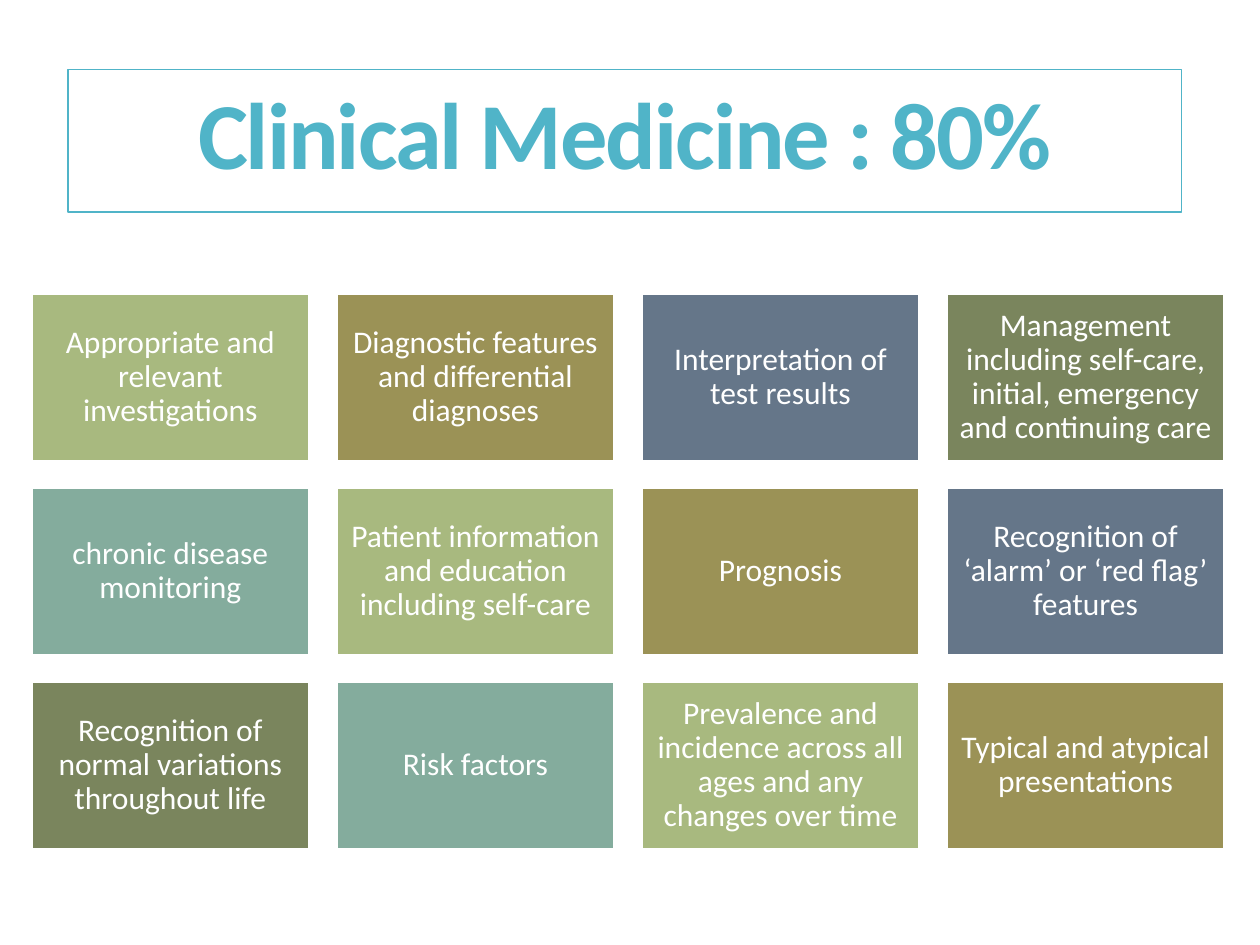
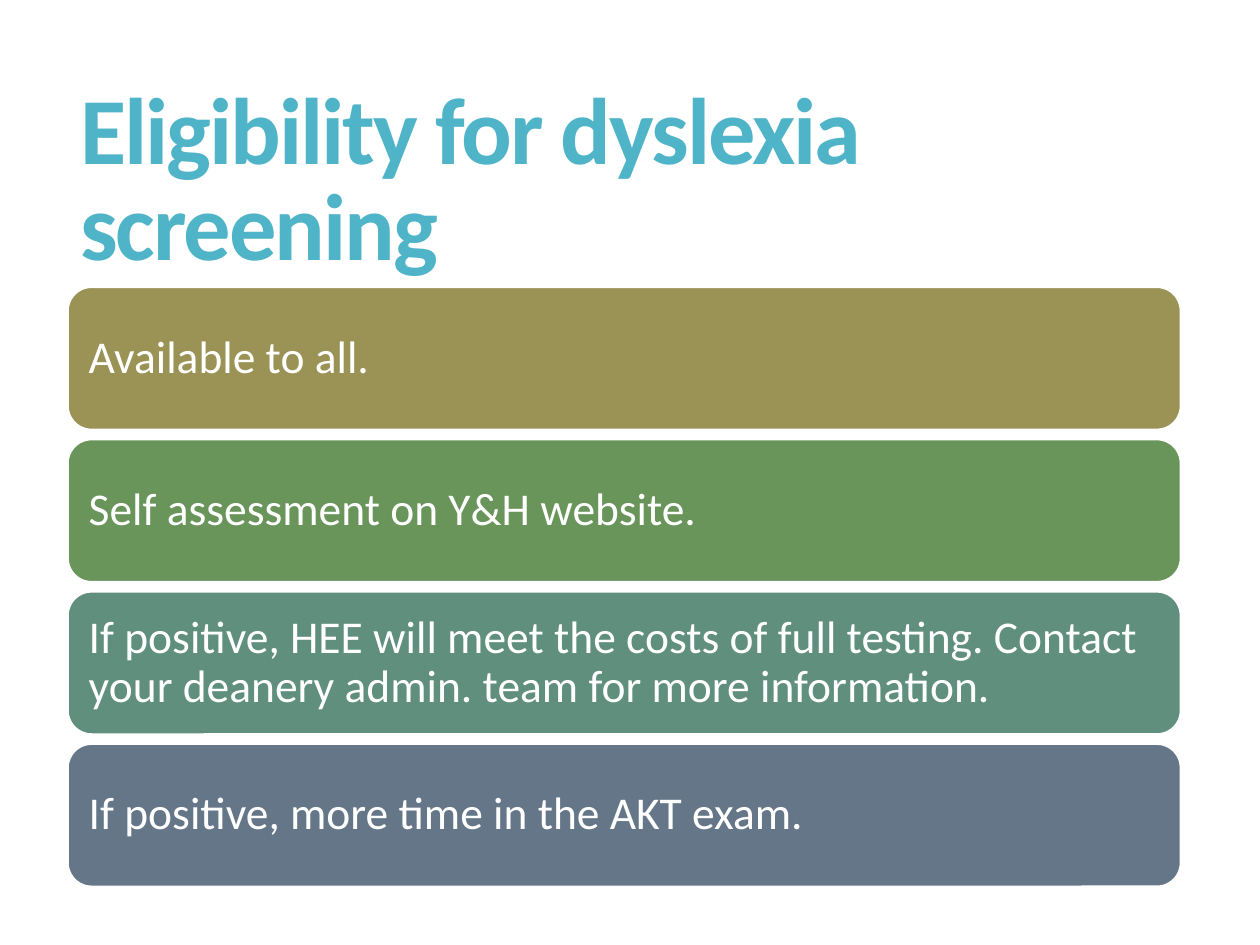
from itertools import cycle

from pptx import Presentation
from pptx.dml.color import RGBColor
from pptx.enum import shapes, text
from pptx.util import Cm, Pt

COLOURS = {
    "title": "50B4C8", "white": "FFFFFF", "lime": "A8B97F", "olive": "9B9256",
    "slate": "657689", "moss": "7A855D", "sage": "84AC9D",
    "green": "69955B", "teal": "608F7E",
}
FONT = "Calibri"

CLINICAL_TITLE = "Clinical Medicine : 80%"
TOPICS = [
    "Appropriate and relevant investigations",
    "Diagnostic features and differential diagnoses",
    "Interpretation of test results",
    "Management including self-care, initial, emergency and continuing care",
    "chronic disease monitoring",
    "Patient information and education including self-care",
    "Prognosis",
    "Recognition of ‘alarm’ or ‘red flag’ features",
    "Recognition of normal variations throughout life",
    "Risk factors",
    "Prevalence and incidence across all ages and any changes over time",
    "Typical and atypical presentations",
]
TOPIC_COLOURS = ["lime", "olive", "slate", "moss", "sage"]

SCREENING_TITLE = "Eligibility for dyslexia screening"
SCREENING_STEPS = [
    ("Available to all.", "olive"),
    ("Self assessment on Y&H website.", "green"),
    ("If positive, HEE will meet the costs of full testing. "
     "Contact your deanery admin. team for more information.", "teal"),
    ("If positive, more time in the AKT exam.", "slate"),
]

# Lengths in centimetres
MARGIN = 1.37
TITLE_TOP, TITLE_WIDTH = 1.4, 22.45
TILE_COLUMNS = 4
TILE_LEFT, TILE_TOP = 0.64, 5.94
TILE_WIDTH, TILE_HEIGHT, TILE_GAP = 5.59, 3.35, 0.56
BAR_TOP, BAR_WIDTH, BAR_HEIGHT, BAR_GAP = 5.79, 22.43, 2.87, 0.2


def colour(name):
    return RGBColor.from_string(COLOURS[name])


def add_box(slide, kind, place, words, size, fill=None, line=None,
            font_colour="white", align=text.PP_ALIGN.LEFT, spacing=0.9, inset=None):
    """Add a shape with one middle-anchored paragraph and return its run."""
    shape = slide.shapes.add_shape(kind, *map(Cm, place))
    shape.shadow.inherit = False
    for part, name in ((shape.fill, fill), (shape.line.fill, line)):
        if name:
            part.solid()
            part.fore_color.rgb = colour(name)
        else:
            part.background()
    if line:
        shape.line.width = Pt(1)

    frame = shape.text_frame
    frame.text = words
    frame.word_wrap = True
    frame.vertical_anchor = text.MSO_ANCHOR.MIDDLE
    if inset is not None:
        frame.margin_left = frame.margin_right = Cm(inset)
        frame.margin_top = frame.margin_bottom = Cm(inset)
    paragraph = frame.paragraphs[0]
    paragraph.alignment = align
    paragraph.line_spacing = spacing
    run = paragraph.runs[0]
    run.font.name = FONT
    run.font.size = Pt(size)
    run.font.color.rgb = colour(font_colour)
    return run


def add_title(slide, words, height, **style):
    run = add_box(slide, shapes.MSO_SHAPE.RECTANGLE,
                  (MARGIN, TITLE_TOP, TITLE_WIDTH, height), words, 54,
                  font_colour="title", spacing=0.85, **style)
    run.font.bold = True
    run._r.get_or_add_rPr().set("spc", "-120")


def build_clinical_medicine(slide):
    add_title(slide, CLINICAL_TITLE, 2.87, line="title", align=text.PP_ALIGN.CENTER)
    for index, (topic, fill) in enumerate(zip(TOPICS, cycle(TOPIC_COLOURS))):
        row, column = divmod(index, TILE_COLUMNS)
        place = (TILE_LEFT + column * (TILE_WIDTH + TILE_GAP),
                 TILE_TOP + row * (TILE_HEIGHT + TILE_GAP), TILE_WIDTH, TILE_HEIGHT)
        add_box(slide, shapes.MSO_SHAPE.RECTANGLE, place, topic, 18, fill=fill,
                line="white", align=text.PP_ALIGN.CENTER, inset=0.18)


def build_screening(slide):
    add_title(slide, SCREENING_TITLE, 4.6)
    for row, (step, fill) in enumerate(SCREENING_STEPS):
        place = (MARGIN, BAR_TOP + row * (BAR_HEIGHT + BAR_GAP), BAR_WIDTH, BAR_HEIGHT)
        add_box(slide, shapes.MSO_SHAPE.ROUNDED_RECTANGLE, place, step, 26,
                fill=fill, line="white", inset=0.28)


def main():
    presentation = Presentation()
    presentation.slide_width, presentation.slide_height = Cm(25.4), Cm(19.05)
    blank = presentation.slide_layouts[6]
    for build in (build_clinical_medicine, build_screening):
        build(presentation.slides.add_slide(blank))
    presentation.save("out.pptx")


if __name__ == "__main__":
    main()
